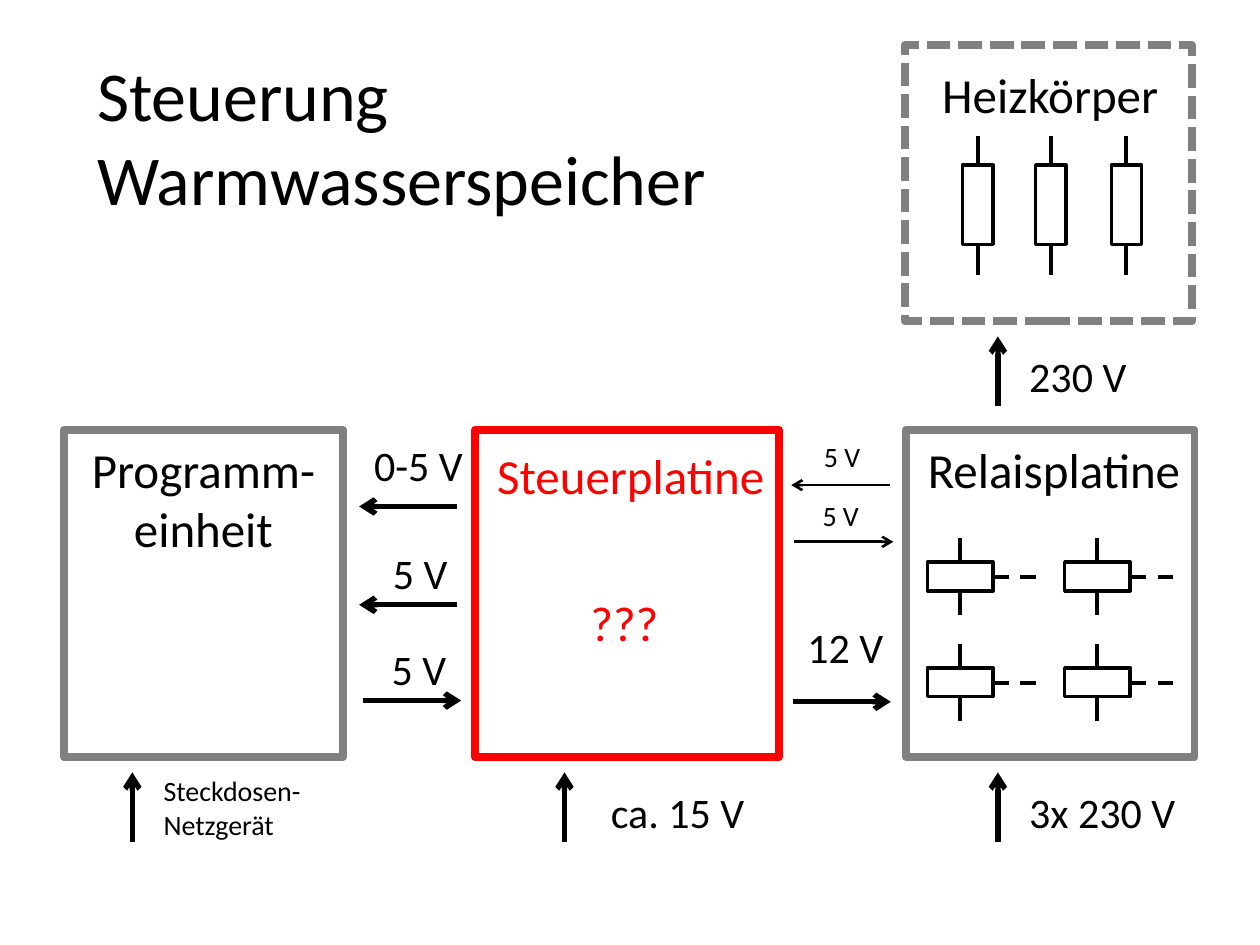
"""Build the block diagram slide of a hot water tank control."""
from lxml.etree import SubElement
from pptx import Presentation
from pptx.dml.color import RGBColor
from pptx.enum.dml import MSO_LINE_DASH_STYLE as Dash
from pptx.enum.shapes import MSO_CONNECTOR as Connector, MSO_SHAPE as Shape
from pptx.enum.text import MSO_ANCHOR as Anchor, MSO_AUTO_SIZE as AutoSize, PP_ALIGN as Align
from pptx.oxml.ns import qn
from pptx.util import Emu, Pt

PX_PER_INCH = 100
EMU_PER_PX = 914400 // PX_PER_INCH
FONT = "Calibri"
BLACK = RGBColor(0x00, 0x00, 0x00)
WHITE = RGBColor(0xFF, 0xFF, 0xFF)
GRAY = RGBColor(0x80, 0x80, 0x80)
RED = RGBColor(0xFF, 0x00, 0x00)

TITLE = "Steuerung\nWarmwasserspeicher"
TITLE_BOX = (67, 36, 512, 212)

BLOCKS = [
    ((718, 36, 228, 219), GRAY, Dash.SQUARE_DOT),
    ((719, 341, 229, 260), GRAY, None),
    ((377, 341, 241, 260), RED, None),
    ((51, 341, 221, 260), GRAY, None),
]
HEADINGS = [
    ("Heizkörper", (715, 46, 237, 57), BLACK),
    ("Relaisplatine", (718, 344, 237, 57), BLACK),
    ("Steuerplatine", (382, 349, 237, 57), RED),
    ("???", (413, 465, 165, 57), RED),
    ("Programm-einheit", (43, 344, 237, 104), BLACK),
]
LABELS = [
    ("230 V", (807, 273, 98, 50), 24),
    ("3x 230 V", (807, 619, 139, 50), 24),
    ("ca. 15 V", (475, 619, 127, 50), 24),
    ("Steckdosen-\vNetzgerät", (120, 609, 131, 64), 16),
    ("12 V", (631, 488, 81, 50), 24),
    ("5 V", (644, 344, 49, 37), 16),
    ("5 V", (643, 391, 49, 37), 16),
    ("0-5 V", (287, 344, 91, 50), 24),
    ("5 V", (302, 430, 64, 50), 24),
    ("5 V", (301, 506, 64, 50), 24),
]
SUPPLY_ARROWS = [(792, 322), (792, 668), (448, 668), (105, 668)]
SUPPLY_LENGTH = 55
SIGNAL_ARROWS = [
    (363, 285, 402, 3),
    (363, 285, 480, 3),
    (288, 366, 556, 3),
    (706, 628, 385, 1.5),
    (630, 709, 430, 1.5),
    (629, 707, 557, 3),
]
HEATER_CENTERS = [776, 834, 894]
RELAY_COLUMNS = [762, 871]
RELAY_ROWS = [458, 542]


def px(*values):
    return [Emu(value * EMU_PER_PX) for value in values]


def add_box(slide, box, color, width, dash=None):
    shape = slide.shapes.add_shape(Shape.RECTANGLE, *px(*box))
    shape.shadow.inherit = False
    shape.fill.solid()
    shape.fill.fore_color.rgb = WHITE
    shape.line.color.rgb = color
    shape.line.width = Pt(width)
    if dash:
        shape.line.dash_style = dash


def add_line(slide, start, end, width, dash=None, arrow=False):
    connector = slide.shapes.add_connector(Connector.STRAIGHT, *px(*start, *end))
    connector.line.color.rgb = BLACK
    connector.line.width = Pt(width)
    if dash:
        connector.line.dash_style = dash
    if arrow:
        SubElement(connector.line._get_or_add_ln(), qn("a:tailEnd"), type="arrow")
    SubElement(connector._element.spPr, qn("a:effectLst"))


def format_text(frame, text, size, color, align):
    frame.text = text
    for paragraph in frame.paragraphs:
        paragraph.alignment = align
        paragraph.font.name = FONT
        paragraph.font.size = Pt(size)
        paragraph.font.color.rgb = color


def add_text(slide, text, box, size, color=BLACK, align=Align.LEFT, wrap=False):
    frame = slide.shapes.add_textbox(*px(*box)).text_frame
    frame.word_wrap = wrap
    format_text(frame, text, size, color, align)


def add_title(slide):
    title = slide.shapes.title
    title.left, title.top, title.width, title.height = px(*TITLE_BOX)
    frame = title.text_frame
    frame.auto_size = AutoSize.NONE
    frame.vertical_anchor = Anchor.TOP
    format_text(frame, TITLE, 40, BLACK, Align.LEFT)


def add_heater(slide, x):
    add_line(slide, (x, 108), (x, 218), 2.25)
    add_box(slide, (x - 12, 131, 24, 63), BLACK, 2)


def add_relay(slide, x, y):
    add_line(slide, (x, y - 31), (x, y + 30), 2.25)
    add_box(slide, (x - 26, y - 12, 52, 23), BLACK, 2)
    add_line(slide, (x + 26, y), (x + 65, y), 2.25, Dash.DASH)


def main():
    presentation = Presentation()
    presentation.slide_width, presentation.slide_height = px(1000, 750)
    slide = presentation.slides.add_slide(presentation.slide_layouts[5])
    add_title(slide)
    for box, color, dash in BLOCKS:
        add_box(slide, box, color, 4.5, dash)
    for text, box, color in HEADINGS:
        add_text(slide, text, box, 28, color, Align.CENTER, wrap=True)
    for text, box, size in LABELS:
        add_text(slide, text, box, size)
    for x, bottom in SUPPLY_ARROWS:
        add_line(slide, (x, bottom), (x, bottom - SUPPLY_LENGTH), 3, arrow=True)
    for start, end, y, width in SIGNAL_ARROWS:
        add_line(slide, (start, y), (end, y), width, arrow=True)
    for x in HEATER_CENTERS:
        add_heater(slide, x)
    for x in RELAY_COLUMNS:
        for y in RELAY_ROWS:
            add_relay(slide, x, y)
    presentation.save("out.pptx")


if __name__ == "__main__":
    main()
